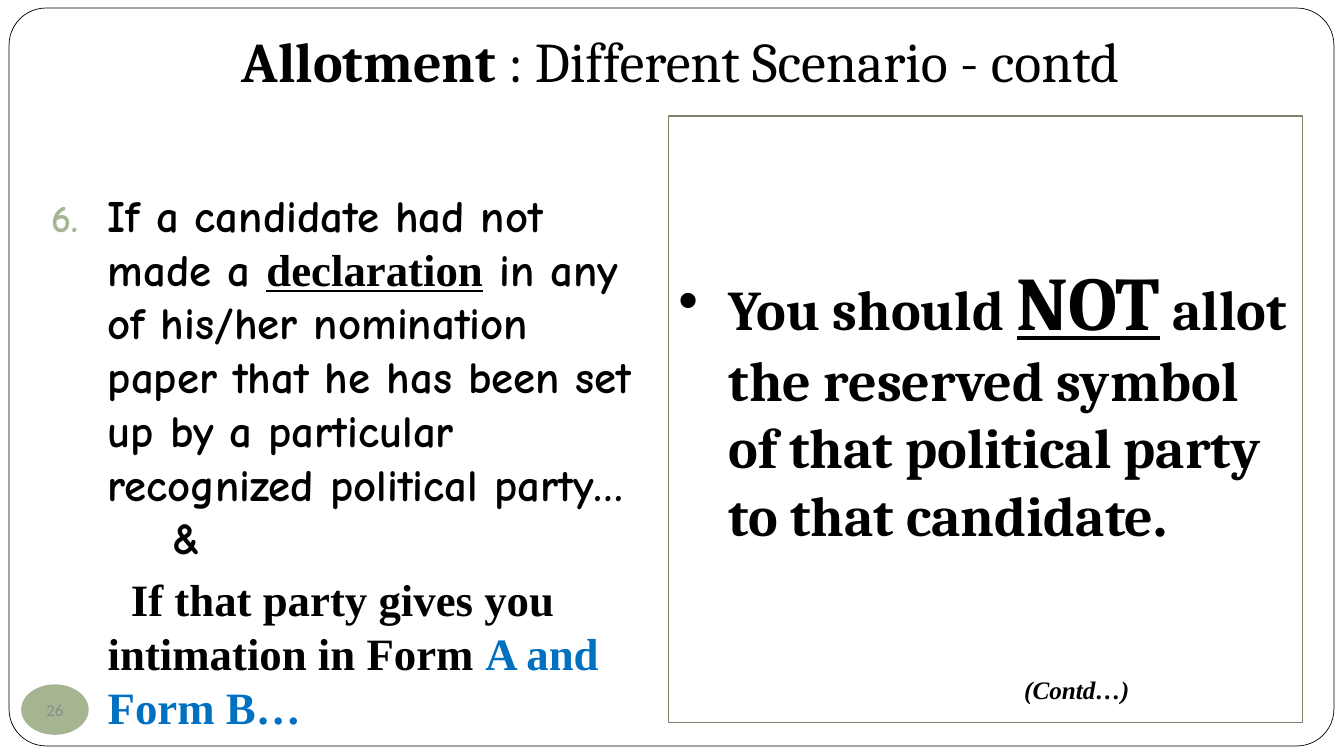
from pptx import Presentation
from pptx import util as u
from pptx.dml.color import RGBColor
from pptx.enum import shapes, text
from pptx.oxml import parse_xml
from pptx.oxml.ns import nsdecls

PX = 9144  # 100 px to the inch
BLACK = RGBColor(0x00, 0x00, 0x00)
WHITE = RGBColor(0xFF, 0xFF, 0xFF)
SAGE = RGBColor(0xA5, 0xB5, 0x92)
OLIVE = RGBColor(0x7A, 0x86, 0x6C)
BLUE = RGBColor(0x00, 0x70, 0xC0)
GRAY = RGBColor(0x8B, 0x8B, 0x8B)
SERIF, COMIC, TIMES = "Cambria", "Comic Neue", "Times New Roman"


def add_shape(kind, box, fill=None, line=None, width=1):
    sp = s.shapes.add_shape(kind, *[n * PX for n in box])
    sp.shadow.inherit = False
    if fill is None:
        sp.fill.background()
    else:
        sp.fill.solid()
        sp.fill.fore_color.rgb = fill
    if line is None:
        sp.line.fill.background()
    else:
        sp.line.color.rgb = line
        sp.line.width = u.Pt(width)
    return sp


def write(p, runs, left=0, indent=0, bullet=()):
    """Each run is (text, font, size, bold, underline, colour)."""
    pPr = p._p.get_or_add_pPr()
    pPr.set("marL", str(left * PX))
    pPr.set("indent", str(indent * PX))
    for xml in bullet:
        pPr.append(parse_xml(xml.replace("/>", f" {nsdecls('a')}/>", 1)
                             if xml.endswith("/>") and xml.count("<") == 1
                             else xml.replace(">", f" {nsdecls('a')}>", 1)))
    for words, name, size, bold, underline, color in runs:
        r = p.add_run()
        r.text = words
        r.font.name, r.font.size = name, u.Pt(size)
        r.font.bold, r.font.underline = bold, underline
        r.font.color.rgb = color


prs = Presentation()
prs.slide_width, prs.slide_height = 1333 * PX, 750 * PX
s = prs.slides.add_slide(prs.slide_layouts[5])

# Rounded frame, behind the title
title = s.shapes.title
frame = add_shape(shapes.MSO_SHAPE.ROUNDED_RECTANGLE, (9, 8, 1314, 732), WHITE, BLACK, 0.5)
frame.adjustments[0] = 0.05
title.element.addprevious(frame.element)

# Title
title.left, title.top, title.width, title.height = [n * PX for n in (32, 23, 1262, 73)]
tf = title.text_frame
tf.margin_left = 34 * PX
tf.vertical_anchor = text.MSO_ANCHOR.MIDDLE
tf.auto_size = text.MSO_AUTO_SIZE.NONE
write(tf.paragraphs[0], [("Allotment", SERIF, 40, True, False, BLACK),
                         (" : Different Scenario - contd", SERIF, 40, False, False, BLACK)])
tf.paragraphs[0].alignment = text.PP_ALIGN.CENTER

# Ruling on the right
ruling = add_shape(shapes.MSO_SHAPE.RECTANGLE, (663, 115, 629, 602), line=OLIVE)
tf = ruling.text_frame
tf.word_wrap = True
tf.vertical_anchor = text.MSO_ANCHOR.TOP
tf.margin_top = 138 * PX
p = tf.paragraphs[0]
write(p, [("You should ", SERIF, 40, True, False, BLACK),
          ("NOT", SERIF, 54, True, True, BLACK),
          (" allot the reserved symbol of that political party to that candidate",
           SERIF, 40, True, False, BLACK),
          (".", TIMES, 40, True, False, BLACK)],
      50, -50, ['<a:buFont typeface="Arial"/>', '<a:buChar char="•"/>'])
p.alignment = text.PP_ALIGN.LEFT

# Scenario on the left
scenario = s.shapes.add_textbox(*[n * PX for n in (41, 119, 601, 600)])
tf = scenario.text_frame
tf.word_wrap = True
tf.margin_top = 67 * PX
number = [f'<a:buClr><a:srgbClr val="{SAGE}"/></a:buClr>', '<a:buSzPct val="85000"/>',
          '<a:buFont typeface="Comic Neue"/>', '<a:buAutoNum type="arabicPeriod" startAt="6"/>']
paragraphs = [
    ([("If a candidate had not made a ", COMIC, 32, True, False, BLACK),
      ("declaration", TIMES, 32, True, True, BLACK),
      (" in any of his/her nomination paper that he has been set up by a particular "
       "recognized political party…", COMIC, 32, True, False, BLACK)], 56, -56, number, 0),
    ([("&", COMIC, 32, True, False, BLACK)], 120, 0, (), 0),
    ([("If that party gives you intimation in Form ", TIMES, 32, True, False, BLACK),
      ("A and Form B…", TIMES, 32, True, False, BLUE)], 56, 23, (), 5.8),
]
for i, (runs, left, indent, bullet, before) in enumerate(paragraphs):
    p = tf.add_paragraph() if i else tf.paragraphs[0]
    write(p, runs, left, indent, bullet)
    if before:
        p.space_before = u.Pt(before)

# Slide number
badge = add_shape(shapes.MSO_SHAPE.OVAL, (21, 679, 67, 50), SAGE)
tf = badge.text_frame
tf.margin_left = tf.margin_right = 0
write(tf.paragraphs[0], [("26", "Calibri", 12, False, False, GRAY)])
tf.paragraphs[0].alignment = text.PP_ALIGN.CENTER

# Continuation note
note = s.shapes.add_textbox(*[n * PX for n in (1006, 664, 125, 40)])
tf = note.text_frame
tf.word_wrap = False
tf.auto_size = text.MSO_AUTO_SIZE.SHAPE_TO_FIT_TEXT
write(tf.paragraphs[0], [("(Contd…)", TIMES, 18, True, False, BLACK)])
tf.paragraphs[0].runs[0].font.italic = True

prs.save("out.pptx")
